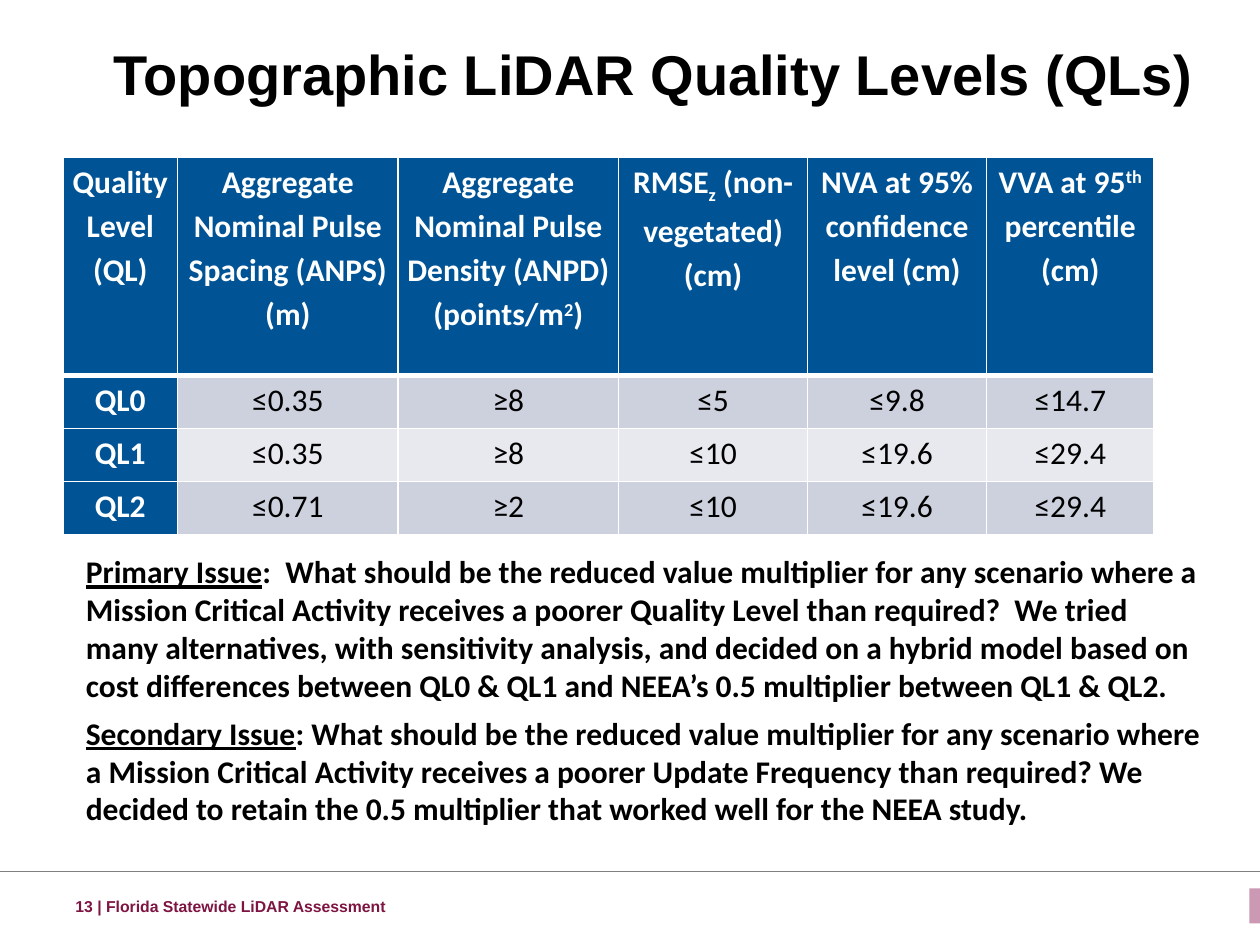
from lxml.etree import SubElement as Sub
from pptx import Presentation as Deck
from pptx.dml.color import RGBColor as Color
from pptx.enum.shapes import MSO_CONNECTOR as Link, MSO_SHAPE as Form
from pptx.enum.text import MSO_ANCHOR as Anchor, MSO_AUTO_SIZE as Fit, PP_ALIGN as Align
from pptx.oxml.ns import qn
from pptx.util import Pt

BLACK = Color(0x00, 0x00, 0x00)
WHITE = Color(0xFF, 0xFF, 0xFF)
BLUE = Color(0x00, 0x54, 0x96)
DARK = Color(0xCC, 0xD1, 0xDD)
LIGHT = Color(0xE7, 0xE9, 0xEF)
GRAY = Color(0x80, 0x80, 0x80)
WINE = Color(0x7D, 0x14, 0x42)
PINK = Color(0xCB, 0x99, 0xB3)

TITLE = "Topographic LiDAR Quality Levels (QLs)"
FOOT = "13 | Florida Statewide LiDAR Assessment"
HEADS = [
    [("Quality Level (QL)", 0)],
    [("Aggregate Nominal Pulse Spacing (ANPS) (m)", 0)],
    [("Aggregate Nominal Pulse Density (ANPD) (points/m", 0), ("2", 30), (")", 0)],
    [("RMSE", 0), ("z", -25), (" (non-vegetated) (cm)", 0)],
    [("NVA at 95% confidence level (cm)", 0)],
    [("VVA at 95", 0), ("th", 30), (" percentile (cm)", 0)],
]
LEVELS = [
    ("QL0", "≤0.35", "≥8", "≤5", "≤9.8", "≤14.7"),
    ("QL1", "≤0.35", "≥8", "≤10", "≤19.6", "≤29.4"),
    ("QL2", "≤0.71", "≥2", "≤10", "≤19.6", "≤29.4"),
]
WIDTHS = (65.5, 126, 126, 108, 102.25, 95.75)
ISSUES = [
    ("Primary Issue", ":  What should be the reduced value multiplier for any scenario "
     "where a Mission Critical Activity receives a poorer Quality Level than required?  "
     "We tried many alternatives, with sensitivity analysis, and decided on a hybrid model "
     "based on cost differences between QL0 & QL1 and NEEA’s 0.5 multiplier between QL1 & QL2."),
    ("Secondary Issue", ": What should be the reduced value multiplier for any scenario "
     "where a Mission Critical Activity receives a poorer Update Frequency than required? "
     "We decided to retain the 0.5 multiplier that worked well for the NEEA study."),
]


def style(para, face, size, color, bold=True):
    font = para.font
    font.name, font.size, font.bold = face, Pt(size), bold
    font.color.rgb = color


def add_title(slide, x, y, w, h):
    title = slide.shapes.title
    title.left, title.top, title.width, title.height = Pt(x), Pt(y), Pt(w), Pt(h)
    frame = title.text_frame
    frame.text = TITLE
    frame.word_wrap, frame.auto_size = True, Fit.NONE
    frame.vertical_anchor = Anchor.MIDDLE
    para = frame.paragraphs[0]
    para.alignment = Align.CENTER
    style(para, "Arial", 32, BLACK)


def add_edge(cell, side, width):
    line = Sub(cell._tc.get_or_add_tcPr(), qn("a:" + side), w=str(Pt(width)))
    Sub(Sub(line, qn("a:solidFill")), qn("a:srgbClr"), val=str(WHITE))


def fill_cell(cell, runs, row, col):
    cell.margin_left = cell.margin_right = Pt(5)
    cell.margin_top = cell.margin_bottom = 0
    for side in ("lnL", "lnR", "lnT", "lnB"):
        thick = (row, side) in ((0, "lnB"), (1, "lnT"))
        add_edge(cell, side, 3 if thick else 1)
    head = row == 0 or col == 0
    cell.fill.solid()
    cell.fill.fore_color.rgb = BLUE if head else DARK if row % 2 else LIGHT
    para = cell.text_frame.paragraphs[0]
    para.alignment, para.line_spacing = Align.CENTER, 1.15
    for text, shift in runs:
        run = para.add_run()
        run.text = text
        if shift:
            run._r.get_or_add_rPr().set("baseline", str(shift * 1000))
    style(para, "Calibri", 18, WHITE if head else BLACK, head)


def add_grid(slide, x, y, w, h):
    rows = [HEADS] + [[[(text, 0)] for text in level] for level in LEVELS]
    table = slide.shapes.add_table(len(rows), len(WIDTHS), Pt(x), Pt(y), Pt(w), Pt(h)).table
    table.first_col = True
    low = 30.25
    for row, cells in enumerate(rows):
        table.rows[row].height = Pt(low if row else h - low * len(LEVELS))
        for col, runs in enumerate(cells):
            fill_cell(table.cell(row, col), runs, row, col)
    for col, width in zip(table.columns, WIDTHS):
        col.width = Pt(width)


def add_text(slide, x, y, w, h):
    frame = slide.shapes.add_textbox(Pt(x), Pt(y), Pt(w), Pt(h)).text_frame
    frame.word_wrap = True
    return frame


def add_notes(slide, x, y, w, h):
    frame = add_text(slide, x, y, w, h)
    frame.auto_size = Fit.SHAPE_TO_FIT_TEXT
    for i, (label, body) in enumerate(ISSUES):
        para = frame.add_paragraph() if i else frame.paragraphs[0]
        para.space_after = Pt(6)
        run = para.add_run()
        run.text, run.font.underline = label, True
        para.add_run().text = body
        style(para, "Calibri", 18, BLACK)


def add_foot(slide, x, y, w, h):
    rule = slide.shapes.add_connector(Link.STRAIGHT, Pt(x - 24), Pt(y), Pt(x + w + 24), Pt(y))
    rule.line.color.rgb, rule.line.width = GRAY, Pt(0.5)
    Sub(rule._element.spPr, qn("a:effectLst"))
    tab = slide.shapes.add_shape(Form.RECTANGLE, Pt(x + w - 6), Pt(y + 9.5), Pt(7.2), Pt(20))
    tab.shadow.inherit = False
    tab.fill.solid()
    tab.fill.fore_color.rgb = PINK
    tab.line.fill.background()
    frame = add_text(slide, x + 36, y + 11.5, 444, h)
    frame.vertical_anchor = Anchor.MIDDLE
    frame.text = FOOT
    style(frame.paragraphs[0], "Arial", 9, WINE)


def main():
    deck = Deck()
    deck.slide_width, deck.slide_height = Pt(720), Pt(540)
    slide = deck.slides.add_slide(deck.slide_layouts[5])
    add_foot(slide, 0, 498.25, 720, 16)
    add_title(slide, 52.5, 16.5, 642, 50.5)
    add_grid(slide, 36, 90, sum(WIDTHS), 215.5)
    add_notes(slide, 42, 312, 653, 166)
    deck.save("out.pptx")


if __name__ == "__main__":
    main()
